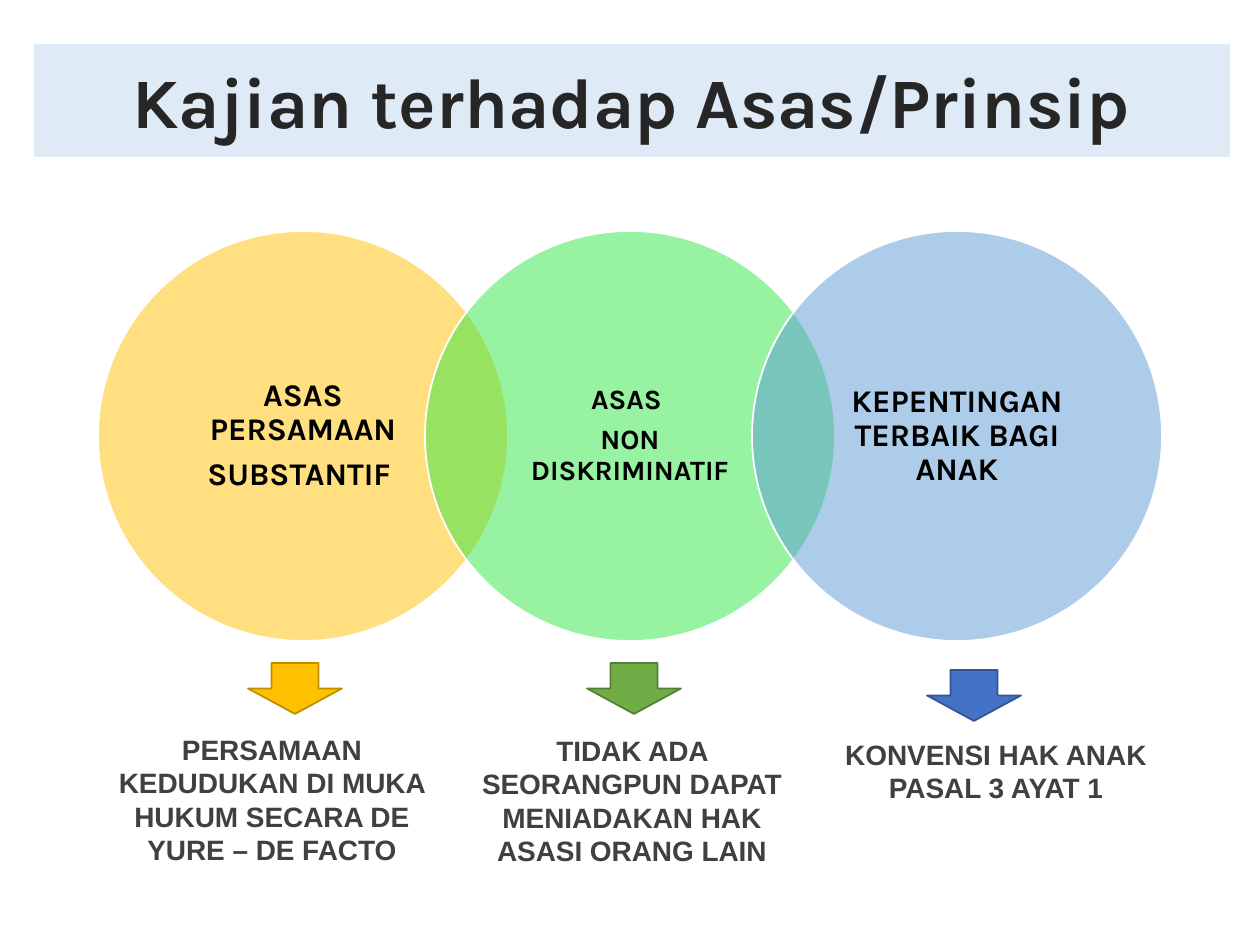
from dataclasses import dataclass

from lxml.etree import SubElement
from pptx import Presentation
from pptx.dml.color import RGBColor
from pptx.enum.shapes import MSO_SHAPE
from pptx.enum.text import MSO_ANCHOR, PP_ALIGN
from pptx.oxml.ns import qn
from pptx.util import Emu, Pt

PX_PER_INCH = 126
COLORS = {
    "banner": "DEEBF7", "title": "262626", "caption": "404040",
    "black": "000000", "white": "FFFFFF",
    "yellow": "FFC000", "yellow_line": "BD8E00",
    "lime": "30E845", "green": "70AD47", "green_line": "538035",
    "sky": "5B9BD5", "blue": "4472C4", "blue_line": "325491",
}

# Row of overlapping circles
CIRCLE_LEFT, CIRCLE_TOP, CIRCLE_SIZE, CIRCLE_STEP = 98, 231, 410, 327
LABEL_INSET = 60
ARROW_W, ARROW_H = 94, 51


@dataclass
class Box:
    x: int
    y: int
    w: int
    h: int


@dataclass
class Principle:
    label: list[str]
    label_size: int
    circle: str
    arrow_at: tuple[int, int]
    arrow: str
    arrow_line: str
    caption: str
    caption_box: Box


PRINCIPLES = [
    Principle(["ASAS PERSAMAAN", "SUBSTANTIF "], 18, "yellow",
              (248, 663), "yellow", "yellow_line",
              "PERSAMAAN KEDUDUKAN DI MUKA HUKUM SECARA DE YURE – DE FACTO",
              Box(97, 726, 350, 149)),
    Principle(["ASAS ", "NON DISKRIMINATIF"], 16, "lime",
              (587, 663), "green", "green_line",
              "TIDAK ADA SEORANGPUN DAPAT MENIADAKAN HAK ASASI ORANG LAIN",
              Box(465, 727, 334, 149)),
    Principle(["KEPENTINGAN TERBAIK BAGI ANAK"], 18, "sky",
              (927, 670), "blue", "blue_line",
              "KONVENSI HAK ANAK PASAL 3 AYAT 1",
              Box(829, 731, 334, 81)),
]


def px(n: int) -> Emu:
    return Emu(round(n * 914400 / PX_PER_INCH))


def rgb(name: str) -> RGBColor:
    return RGBColor.from_string(COLORS[name])


def bounds(box: Box) -> list[Emu]:
    return [px(n) for n in (box.x, box.y, box.w, box.h)]


def add_filled(slide, kind, box: Box, fill: str, line: str | None = None,
               opacity: int = 100):
    sp = slide.shapes.add_shape(kind, *bounds(box))
    sp.shadow.inherit = False
    sp.fill.solid()
    sp.fill.fore_color.rgb = rgb(fill)
    if opacity < 100:
        color = sp.fill._xPr.find(qn("a:solidFill"))[0]
        SubElement(color, qn("a:alpha"), val=str(opacity * 1000))
    if line:
        sp.line.color.rgb = rgb(line)
        sp.line.width = Pt(1)
    else:
        sp.line.fill.background()
    return sp


def add_textbox(slide, box: Box):
    tf = slide.shapes.add_textbox(*bounds(box)).text_frame
    tf.word_wrap = True
    return tf


def write(tf, lines: list[str], size: float, font: str, color: str) -> None:
    for i, line in enumerate(lines):
        p = tf.add_paragraph() if i else tf.paragraphs[0]
        p.alignment = PP_ALIGN.CENTER
        r = p.add_run()
        r.text = line
        r.font.name = font
        r.font.size = Pt(size)
        r.font.bold = True
        r.font.color.rgb = rgb(color)


def add_circle(slide, box: Box, item: Principle) -> None:
    add_filled(slide, MSO_SHAPE.OVAL, box, item.circle, "white", opacity=50)
    side = box.w - 2 * LABEL_INSET
    tf = add_textbox(slide, Box(box.x + LABEL_INSET, box.y + LABEL_INSET, side, side))
    tf.vertical_anchor = MSO_ANCHOR.MIDDLE
    tf.margin_left = tf.margin_right = px(23)
    tf.margin_top = tf.margin_bottom = px(3)
    write(tf, item.label, item.label_size, "Karla", "black")
    for p in tf.paragraphs:
        p.line_spacing = 0.9
        p.space_after = Pt(item.label_size * 0.35)


def main() -> None:
    prs = Presentation()
    prs.slide_width, prs.slide_height = px(1260), px(945)
    slide = prs.slides.add_slide(prs.slide_layouts[6])

    # Circles with their labels
    for i, item in enumerate(PRINCIPLES):
        box = Box(CIRCLE_LEFT + i * CIRCLE_STEP, CIRCLE_TOP, CIRCLE_SIZE, CIRCLE_SIZE)
        add_circle(slide, box, item)

    # Title banner
    banner = add_filled(slide, MSO_SHAPE.RECTANGLE, Box(34, 44, 1196, 113), "banner")
    tf = banner.text_frame
    tf.vertical_anchor = MSO_ANCHOR.MIDDLE
    write(tf, ["Kajian terhadap Asas/Prinsip"], 40.5, "Karla", "title")
    tf.paragraphs[0].space_before = Pt(8)

    # Arrows and captions
    for item in PRINCIPLES:
        add_filled(slide, MSO_SHAPE.DOWN_ARROW, Box(*item.arrow_at, ARROW_W, ARROW_H),
                   item.arrow, item.arrow_line)
        tf = add_textbox(slide, item.caption_box)
        write(tf, [item.caption], 16, "Arial", "caption")

    prs.save("out.pptx")


if __name__ == "__main__":
    main()
